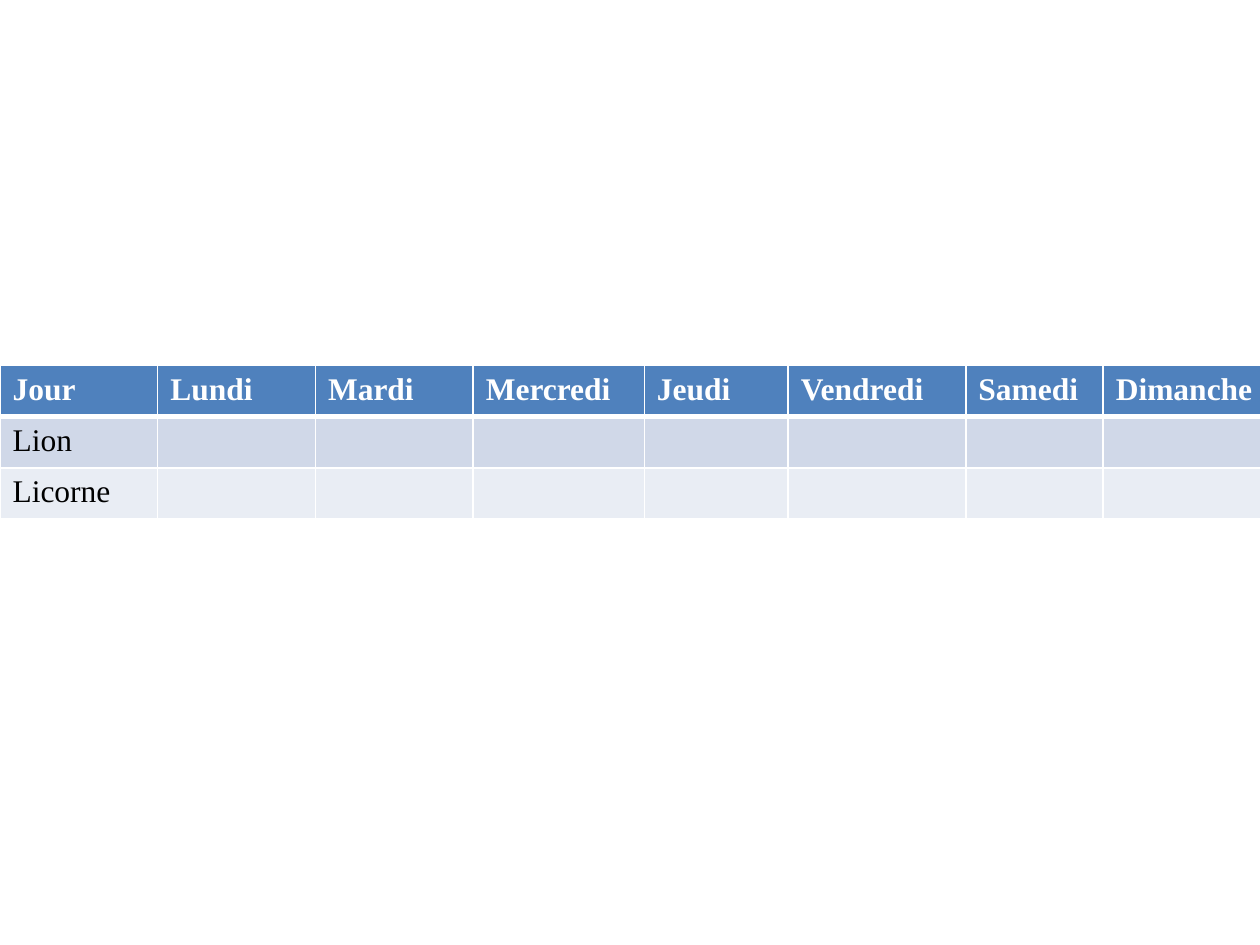
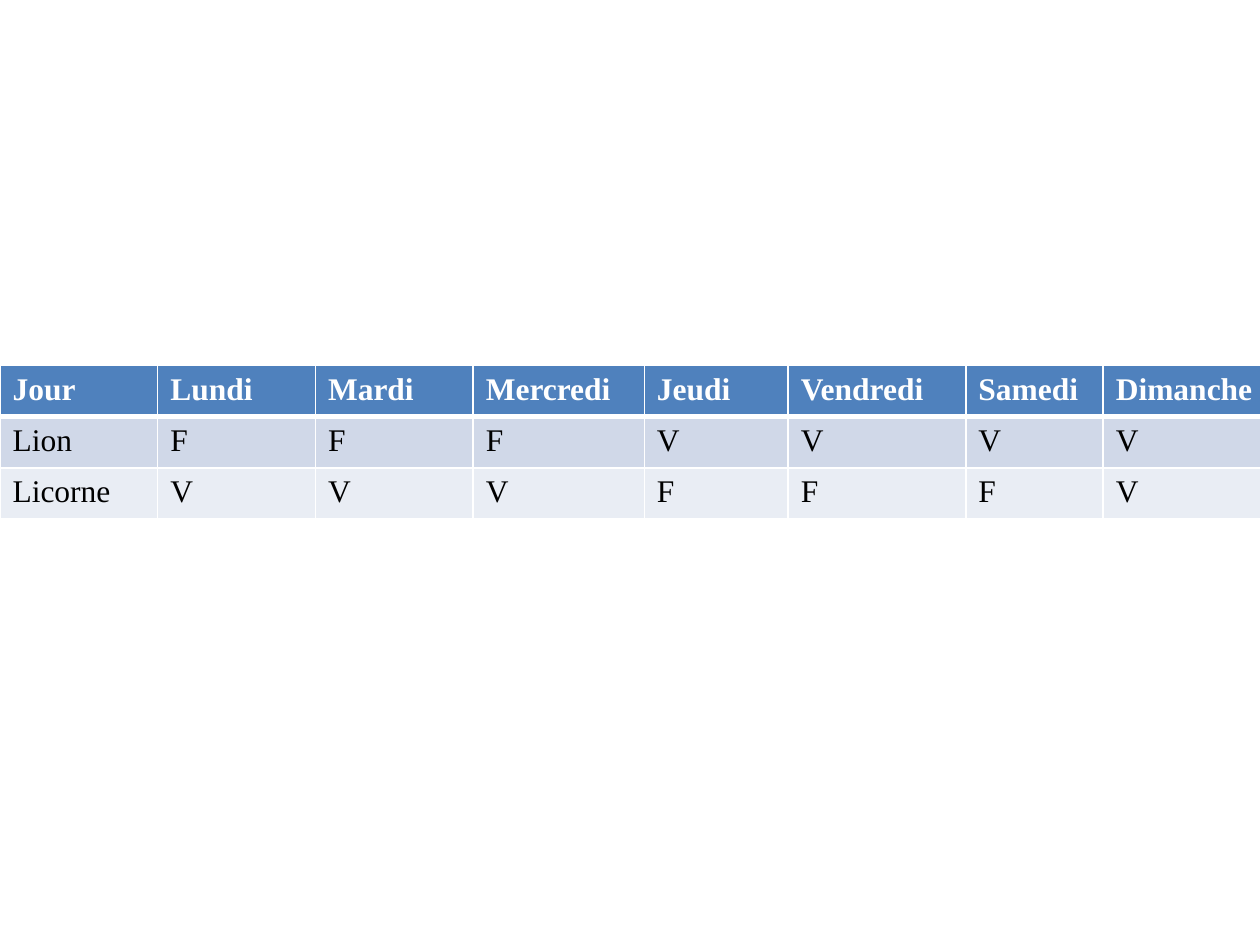
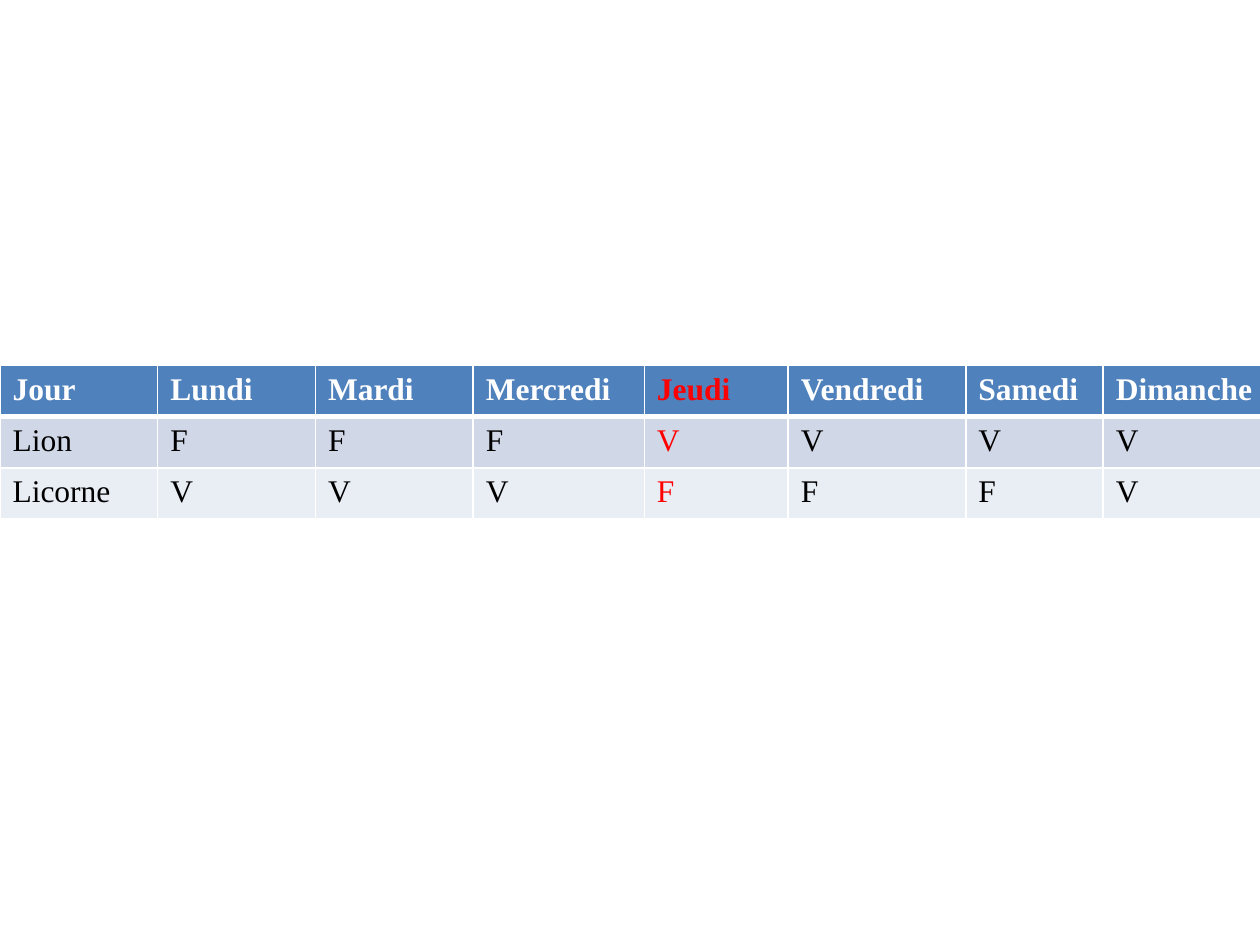
from dataclasses import dataclass
from typing import Optional

from lxml.etree import SubElement
from pptx import Presentation
from pptx.dml.color import RGBColor
from pptx.oxml.ns import qn
from pptx.slide import Slide
from pptx.table import _Cell
from pptx.util import Cm, Pt

FONT = "Times New Roman"
WHITE, BLACK, RED = "FFFFFF", "000000", "FF0000"
ROW_FILLS = ("4F81BD", "D0D8E8", "E9EDF4")
THIN, THICK = 1, 3

TABLE_TOP = 7.37
ROW_HEIGHT = 1.03
COLUMN_WIDTHS = (3.18, 3.18, 3.18, 3.45, 2.9, 3.58, 2.77, 3.71)
HEADER = ("Jour", "Lundi", "Mardi", "Mercredi", "Jeudi", "Vendredi", "Samedi", "Dimanche")
THURSDAY = HEADER.index("Jeudi")


@dataclass(frozen=True)
class Week:
    """Truth values of each animal from Monday to Sunday, one letter a day."""
    lion: str = ""
    unicorn: str = ""
    highlight: Optional[int] = None

    def rows(self) -> list[list[str]]:
        days = len(HEADER) - 1
        return [
            list(HEADER),
            ["Lion", *self.lion.ljust(days)],
            ["Licorne", *self.unicorn.ljust(days)],
        ]


WEEKS = (
    Week(),
    Week("FFFVVVV", "VVVFFFV"),
    Week("FFFVVVV", "VVVFFFV", highlight=THURSDAY),
)


def rgb(color: str) -> RGBColor:
    return RGBColor.from_string(color)


def write(cell: _Cell, text: str, *, color: str = BLACK, bold: bool = False, size: int = 18) -> None:
    r = cell.text_frame.paragraphs[0].add_run()
    r.text = text
    r.font.name = FONT
    r.font.size = Pt(size)
    r.font.bold = bold
    r.font.color.rgb = rgb(color)


def set_borders(cell: _Cell, top: int = THIN, bottom: int = THIN) -> None:
    """Draw white borders, with widths in points."""
    tc_pr = cell._tc.get_or_add_tcPr()
    for side, width in (("L", THIN), ("R", THIN), ("T", top), ("B", bottom)):
        line = SubElement(tc_pr, qn(f"a:ln{side}"), w=str(Pt(width)))
        fill = SubElement(line, qn("a:solidFill"))
        SubElement(fill, qn("a:srgbClr"), val=WHITE)


def add_week_table(s: Slide, week: Week) -> None:
    rows = week.rows()
    table = s.shapes.add_table(
        len(rows), len(HEADER), Cm(0), Cm(TABLE_TOP),
        Cm(sum(COLUMN_WIDTHS)), Cm(ROW_HEIGHT * len(rows)),
    ).table
    for column, width in zip(table.columns, COLUMN_WIDTHS):
        column.width = Cm(width)
    for i, texts in enumerate(rows):
        table.rows[i].height = Cm(ROW_HEIGHT)
        is_header = i == 0
        for j, text in enumerate(texts):
            cell = table.cell(i, j)
            set_borders(cell, top=THICK if i == 1 else THIN, bottom=THICK if is_header else THIN)
            cell.fill.solid()
            cell.fill.fore_color.rgb = rgb(ROW_FILLS[i])
            if text.strip():
                color = RED if j == week.highlight else WHITE if is_header else BLACK
                write(cell, text, color=color, bold=is_header)


def main() -> None:
    prs = Presentation()
    prs.slide_width, prs.slide_height = Cm(25.4), Cm(19.05)
    blank = prs.slide_layouts.get_by_name("Blank")
    for week in WEEKS:
        add_week_table(prs.slides.add_slide(blank), week)
    prs.save("out.pptx")


if __name__ == "__main__":
    main()
